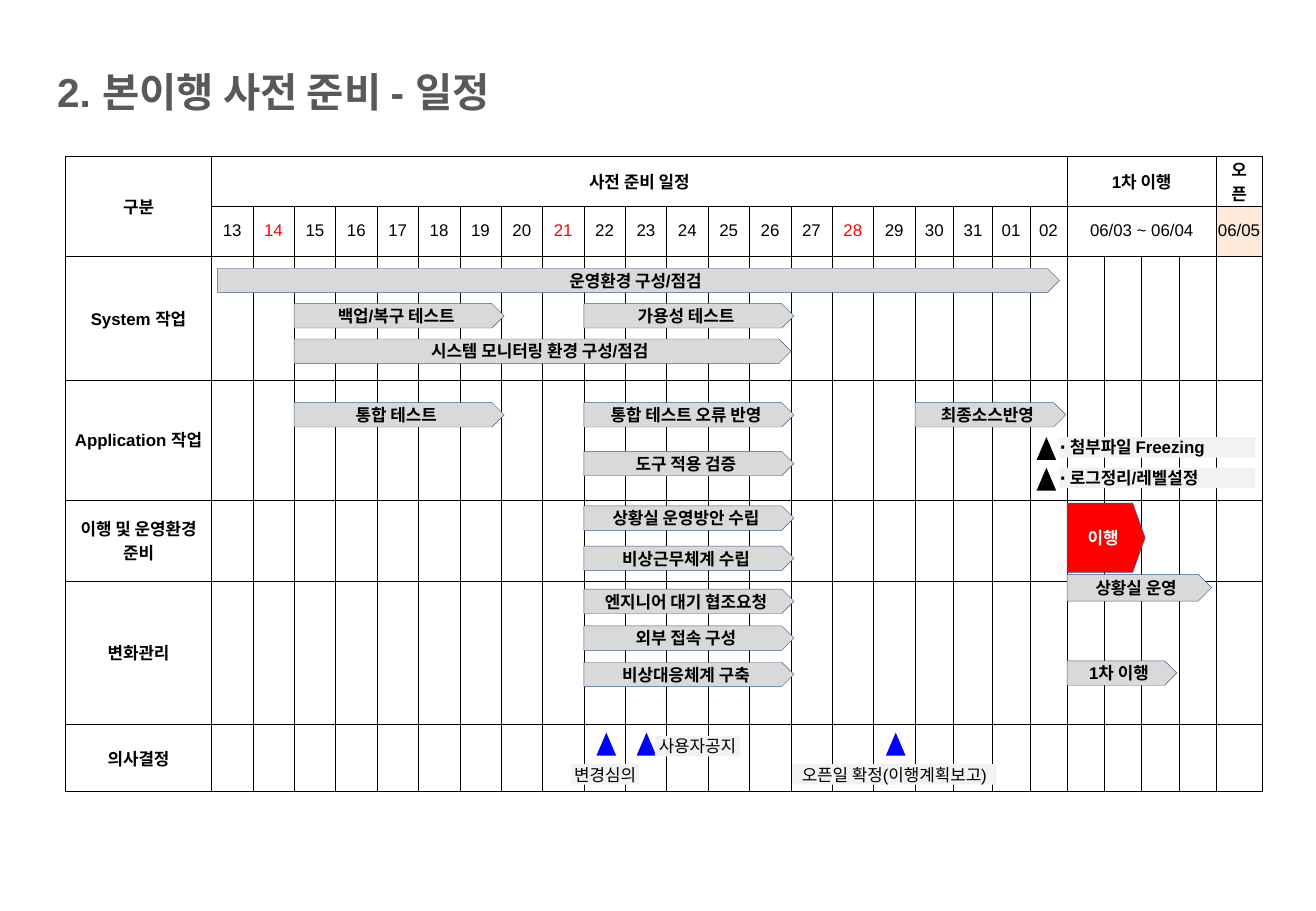
from dataclasses import dataclass
from itertools import accumulate

from lxml.etree import SubElement
from pptx import Presentation
from pptx.dml.color import RGBColor
from pptx.enum.shapes import MSO_SHAPE
from pptx.enum.text import MSO_ANCHOR, MSO_AUTO_SIZE, PP_ALIGN
from pptx.oxml.ns import qn
from pptx.util import Cm, Pt


@dataclass(frozen=True)
class Theme:
    font: str = "Arial"
    launch_font: str = "Noto Sans CJK KR"
    title_size: int = 24
    body_size: int = 10
    hairline: float = 0.25
    title: str = "595959"
    ink: str = "000000"
    white: str = "FFFFFF"
    holiday: str = "FF0000"
    launch: str = "FF0000"
    open_day: str = "FDEADA"
    bar: str = "D9D9D9"
    bar_edge: str = "3A5F8C"
    note: str = "F2F2F2"
    decision: str = "0000FF"


THEME = Theme()

DAYS = [str(day) for day in range(13, 32)] + ["01", "02"]
HOLIDAYS = ("14", "21", "28")
PHASE = "06/03 ~ 06/04"
OPENING = "06/05"
PHASE_COLUMN = len(DAYS) + 1
OPEN_COLUMN = PHASE_COLUMN + 4

TABLE_LEFT, TABLE_TOP = 1.37, 3.27
COLUMN_WIDTHS = [3.05] + [14.71 / 17] * 17 + [0.81] * 2 + [0.78] * 6 + [0.95]
ROW_HEIGHTS = [1.04, 1.04, 2.59, 2.51, 1.7, 3.0, 1.4]
EDGES = list(accumulate(COLUMN_WIDTHS, initial=TABLE_LEFT))
DAY_LEFT = dict(zip(DAYS + [PHASE], EDGES[1:]))

WORK_AREAS = ["System 작업", "Application 작업", "이행 및 운영환경 준비", "변화관리", "의사결정"]

WEEK = 4.39
TASKS = [
    ("백업/복구 테스트", "15", 6.35, WEEK),
    ("가용성 테스트", "22", 6.35, WEEK),
    ("시스템 모니터링 환경 구성/점검", "15", 7.09, 10.39),
    ("통합 테스트", "15", 8.42, WEEK),
    ("통합 테스트 오류 반영", "22", 8.42, WEEK),
    ("최종소스반영", "30", 8.42, 3.15),
    ("도구 적용 검증", "22", 9.44, WEEK),
    ("상황실 운영방안 수립", "22", 10.58, WEEK),
    ("비상근무체계 수립", "22", 11.42, WEEK),
    ("엔지니어 대기 협조요청", "22", 12.32, WEEK),
    ("외부 접속 구성", "22", 13.09, WEEK),
    ("비상대응체계 구축", "22", 13.85, WEEK),
    ("1차 이행", PHASE, 13.82, 2.29),
]
MILESTONES = [
    ("∙ 첨부파일 Freezing", 9.14),
    ("∙ 로그정리/레벨설정", 9.78),
]
DECISIONS = [
    ("오픈일 확정(이행계획보고)", 18.52, 16.56, 15.98, 4.27),
    ("변경심의", 12.47, 11.94, 15.98, 1.42),
    ("사용자공지", 13.31, 13.69, 15.39, 1.78),
]


def rgb(color):
    return RGBColor.from_string(color)


def write(frame, text, *, size=THEME.body_size, color=THEME.ink, bold=False,
          font=THEME.font, align=PP_ALIGN.CENTER, anchor=MSO_ANCHOR.MIDDLE, wrap=True):
    frame.word_wrap = wrap
    frame.vertical_anchor = anchor
    for index, line in enumerate(text.split("\n")):
        paragraph = frame.add_paragraph() if index else frame.paragraphs[0]
        paragraph.alignment = align
        run = paragraph.add_run()
        run.text = line
        run.font.name = font
        run.font.size = Pt(size)
        run.font.bold = bold
        run.font.color.rgb = rgb(color)


def clear_margins(target):
    target.margin_left = target.margin_right = 0
    target.margin_top = target.margin_bottom = 0


def add_title(slide, text):
    title = slide.shapes.title
    title.left, title.top, title.width, title.height = Cm(0.94), Cm(1.27), Cm(23.65), Cm(1.27)
    write(title.text_frame, text, size=THEME.title_size, color=THEME.title,
          bold=True, align=PP_ALIGN.LEFT)


def add_figure(slide, kind, left, top, width, height, fill, edge=None):
    figure = slide.shapes.add_shape(kind, Cm(left), Cm(top), Cm(width), Cm(height))
    figure.shadow.inherit = False
    figure.fill.solid()
    figure.fill.fore_color.rgb = rgb(fill)
    if edge:
        figure.line.color.rgb = rgb(edge)
        figure.line.width = Pt(THEME.hairline)
    else:
        figure.line.fill.background()
    clear_margins(figure.text_frame)
    return figure


def add_bar(slide, text, left, top, width, height=0.51, fill=THEME.bar, **style):
    bar = add_figure(slide, MSO_SHAPE.PENTAGON, left, top, width, height, fill, THEME.bar_edge)
    write(bar.text_frame, text, bold=True, **style)
    return bar


def add_marker(slide, left, top, color):
    add_figure(slide, MSO_SHAPE.ISOSCELES_TRIANGLE, left, top, 0.41, 0.48, color)


def add_note(slide, text, left, top, width, **style):
    note = add_figure(slide, MSO_SHAPE.RECTANGLE, left, top, width, 0.43, THEME.note)
    write(note.text_frame, text, anchor=MSO_ANCHOR.TOP, **style)
    note.text_frame.auto_size = MSO_AUTO_SIZE.SHAPE_TO_FIT_TEXT


def add_borders(cell):
    properties = cell._tc.get_or_add_tcPr()
    for side in ("a:lnL", "a:lnR", "a:lnT", "a:lnB"):
        line = SubElement(properties, qn(side), w=str(Pt(THEME.hairline)))
        fill = SubElement(line, qn("a:solidFill"))
        SubElement(fill, qn("a:srgbClr"), val=THEME.ink)


def fill_cell(table, row, column, text, **style):
    write(table.cell(row, column).text_frame, text, **style)
    table.cell(row, column).vertical_anchor = MSO_ANCHOR.MIDDLE


def add_calendar(slide):
    calendar = slide.shapes.add_table(
        len(ROW_HEIGHTS), len(COLUMN_WIDTHS), Cm(TABLE_LEFT), Cm(TABLE_TOP),
        Cm(sum(COLUMN_WIDTHS)), Cm(sum(ROW_HEIGHTS))).table
    calendar.first_row = calendar.horz_banding = False
    for column, width in zip(calendar.columns, COLUMN_WIDTHS):
        column.width = Cm(width)
    for row, height in zip(calendar.rows, ROW_HEIGHTS):
        row.height = Cm(height)
    for cell in calendar.iter_cells():
        clear_margins(cell)
        add_borders(cell)
        cell.fill.background()

    calendar.cell(0, 0).merge(calendar.cell(1, 0))
    calendar.cell(0, 1).merge(calendar.cell(0, PHASE_COLUMN - 1))
    for row in (0, 1):
        calendar.cell(row, PHASE_COLUMN).merge(calendar.cell(row, OPEN_COLUMN - 1))

    headings = {0: "구분", 1: "사전 준비 일정", PHASE_COLUMN: "1차 이행", OPEN_COLUMN: "오\n픈"}
    for column, heading in headings.items():
        fill_cell(calendar, 0, column, heading, bold=True)
    for column, day in enumerate(DAYS, 1):
        fill_cell(calendar, 1, column, day,
                  color=THEME.holiday if day in HOLIDAYS else THEME.ink)
    fill_cell(calendar, 1, PHASE_COLUMN, PHASE)
    fill_cell(calendar, 1, OPEN_COLUMN, OPENING)
    opening = calendar.cell(1, OPEN_COLUMN)
    opening.fill.solid()
    opening.fill.fore_color.rgb = rgb(THEME.open_day)
    for row, area in enumerate(WORK_AREAS, 2):
        fill_cell(calendar, row, 0, area, bold=True)


def main():
    deck = Presentation()
    deck.slide_width, deck.slide_height = Cm(27.51), Cm(19.05)
    slide = deck.slides.add_slide(deck.slide_layouts[5])
    add_title(slide, "2. 본이행 사전 준비 - 일정")
    add_calendar(slide)

    add_bar(slide, "운영환경 구성/점검", DAY_LEFT["13"] + 0.13, 5.61, 17.6)
    for text, day, top, width in TASKS:
        add_bar(slide, text, DAY_LEFT[day], top, width)
    launch = add_bar(slide, "이행", DAY_LEFT[PHASE], 10.52, 1.63, 1.45, THEME.launch,
                     color=THEME.white, font=THEME.launch_font)
    launch.adjustments[0] = 0.18
    add_bar(slide, "상황실 운영", DAY_LEFT[PHASE], 12.01, 3.02, 0.56)

    for text, top in MILESTONES:
        add_marker(slide, 21.67, top, THEME.ink)
        add_note(slide, text, 22.15, top, 4.09, bold=True, align=PP_ALIGN.LEFT)
    for text, marker_left, left, top, width in DECISIONS:
        add_marker(slide, marker_left, 15.32, THEME.decision)
        add_note(slide, text, left, top, width, wrap=False)

    deck.save("out.pptx")


if __name__ == "__main__":
    main()
